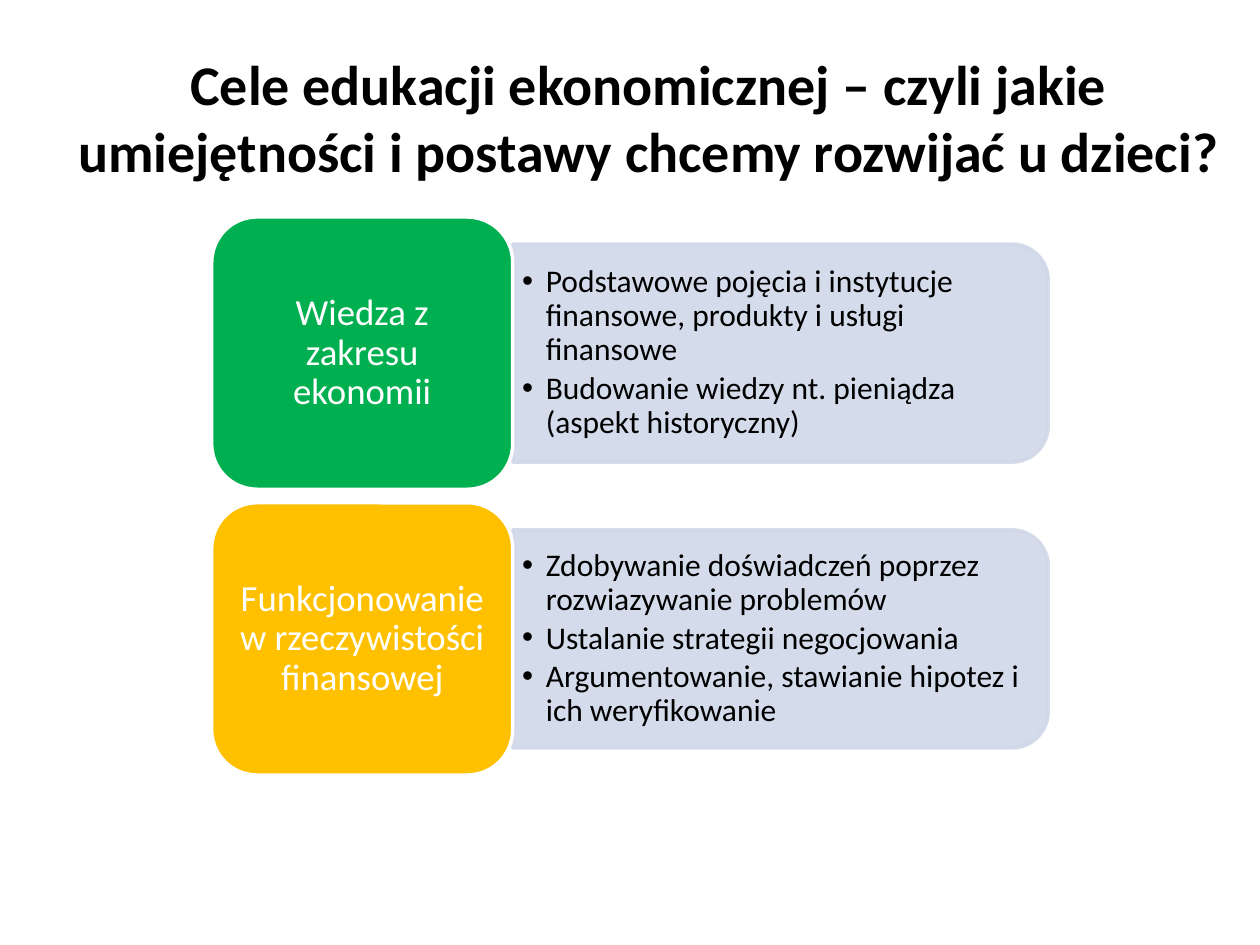
from pptx import Presentation
from pptx.dml.color import RGBColor
from pptx.enum.shapes import MSO_SHAPE
from pptx.enum.text import MSO_ANCHOR, PP_ALIGN
from pptx.oxml.ns import qn
from pptx.util import Pt
from lxml.etree import SubElement

FONT = "Calibri"
PALE = "D0D8E8"
ROWS = [
    ("Wiedza z zakresu ekonomii", "00B050", [
        "Podstawowe pojęcia i instytucje finansowe, produkty i usługi finansowe",
        "Budowanie wiedzy nt. pieniądza (aspekt historyczny)"]),
    ("Funkcjonowanie w rzeczywistości finansowej", "FFC000", [
        "Zdobywanie doświadczeń poprzez rozwiazywanie problemów",
        "Ustalanie strategii negocjowania",
        "Argumentowanie, stawianie hipotez i ich weryfikowanie"]),
]


def color(code):
    return RGBColor.from_string(code)


def add_block(slide, kind, box, fill, line):
    block = slide.shapes.add_shape(kind, *map(Pt, box))
    block.shadow.inherit = False
    block.fill.solid()
    block.fill.fore_color.rgb = color(fill)
    block.line.color.rgb = color(line)
    block.line.width = Pt(2)
    return block


def fade(block, percent):
    for tint in block._element.spPr.iter(qn("a:srgbClr")):
        SubElement(tint, qn("a:alpha"), val=str(percent * 1000))


def add_text(slide, box, lines, size, ink, pad, bold=False):
    frame = slide.shapes.add_textbox(*map(Pt, box)).text_frame
    frame.word_wrap = True
    frame.vertical_anchor = MSO_ANCHOR.MIDDLE
    frame.margin_left = frame.margin_right = Pt(pad)
    frame.margin_top = frame.margin_bottom = Pt(3)
    frame.text = "\n".join(lines)
    for para in frame.paragraphs:
        para.alignment = PP_ALIGN.CENTER
        for run in para.runs:
            font = run.font
            font.name, font.size, font.bold = FONT, Pt(size), bold
            font.color.rgb = color(ink)
    return frame


def add_bullet(para, indent):
    props = para._p.get_or_add_pPr()
    props.set("marL", str(Pt(indent)))
    props.set("indent", str(-Pt(indent)))
    SubElement(props, qn("a:buFont"), typeface="Arial")
    SubElement(props, qn("a:buChar"), char="•")
    para.level = 1
    para.alignment = PP_ALIGN.LEFT
    para.line_spacing = 0.9
    para.space_after = Pt(2.7)


def add_title(slide, box):
    add_text(slide, box, ["Cele edukacji ekonomicznej – czyli jakie\v"
             "umiejętności i postawy chcemy rozwijać u dzieci?"],
             32, "000000", 7.2, bold=True)


def add_row(slide, box, label, fill, points):
    left, top, width, height = box
    card = 172
    wide, tall = width - card, 124.6
    mid = top + height / 2

    # Pale panel, a tall shape turned on its side
    panel = add_block(slide, MSO_SHAPE.ROUND_2_SAME_RECTANGLE,
                      (left + card + (wide - tall) / 2, mid - wide / 2, tall, wide),
                      PALE, PALE)
    panel.rotation = 90
    fade(panel, 90)

    # Bullet points
    frame = add_text(slide, (left + card, mid - 56.2, wide - 6, 112.4),
                     points, 18, "000000", 5.4)
    for para in frame.paragraphs:
        add_bullet(para, 13.5)

    # Coloured card with its label
    add_block(slide, MSO_SHAPE.ROUNDED_RECTANGLE, (left, top, card, height),
              fill, "FFFFFF")
    gap = 7.6
    frame = add_text(slide, (left + gap, top + gap, card - 2 * gap, height - 2 * gap),
                     [label], 21, "FFFFFF", 6.3)
    frame.paragraphs[0].line_spacing = 0.9


def main():
    deck = Presentation()
    deck.slide_width, deck.slide_height = Pt(720), Pt(540)
    slide = deck.slides.add_slide(deck.slide_layouts[6])
    add_title(slide, (36, 21.6, 669.6, 90))
    for i, row in enumerate(ROWS):
        add_row(slide, (121, 124 + i * 163.3, 478, 155.6), *row)
    deck.save("out.pptx")


if __name__ == "__main__":
    main()
